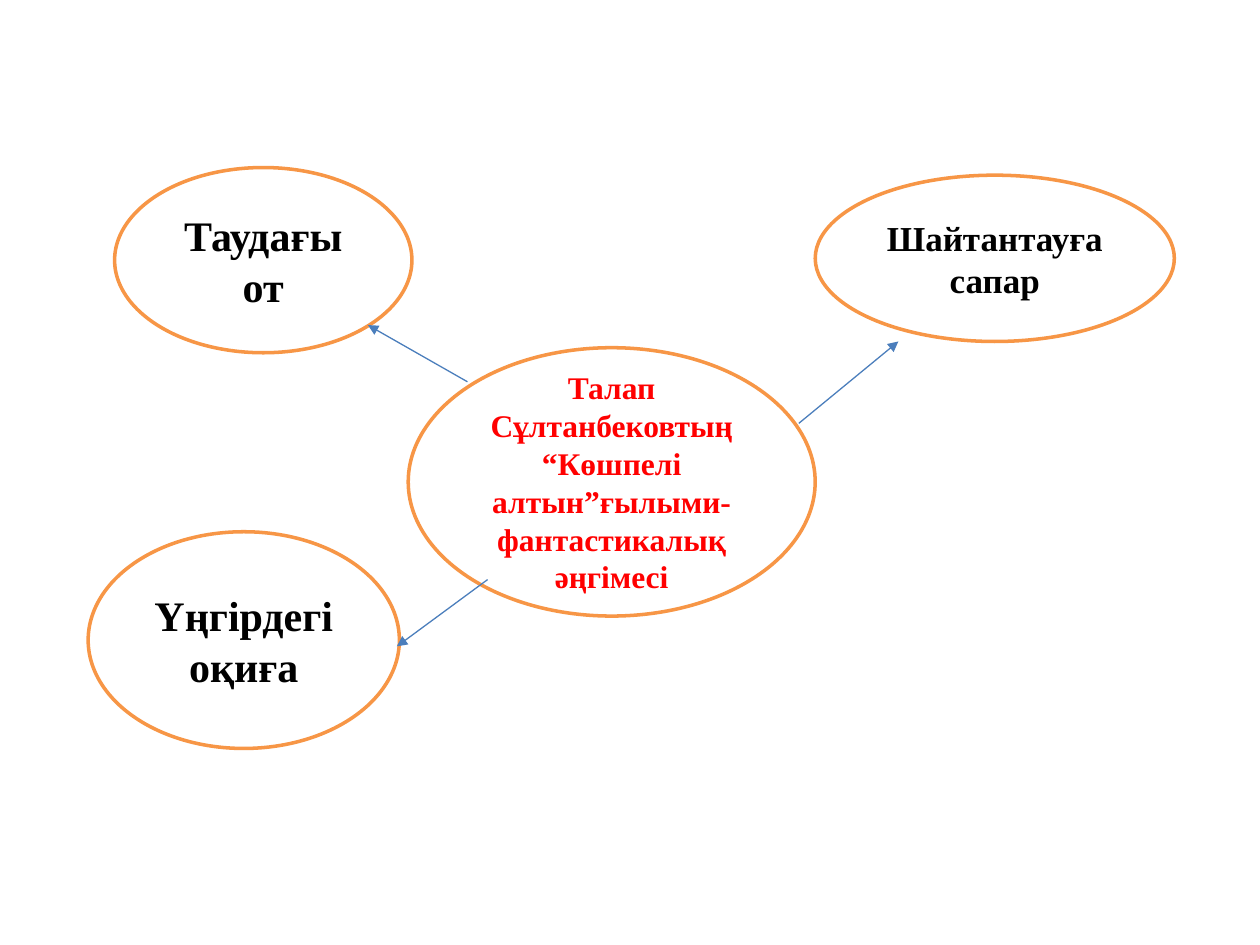
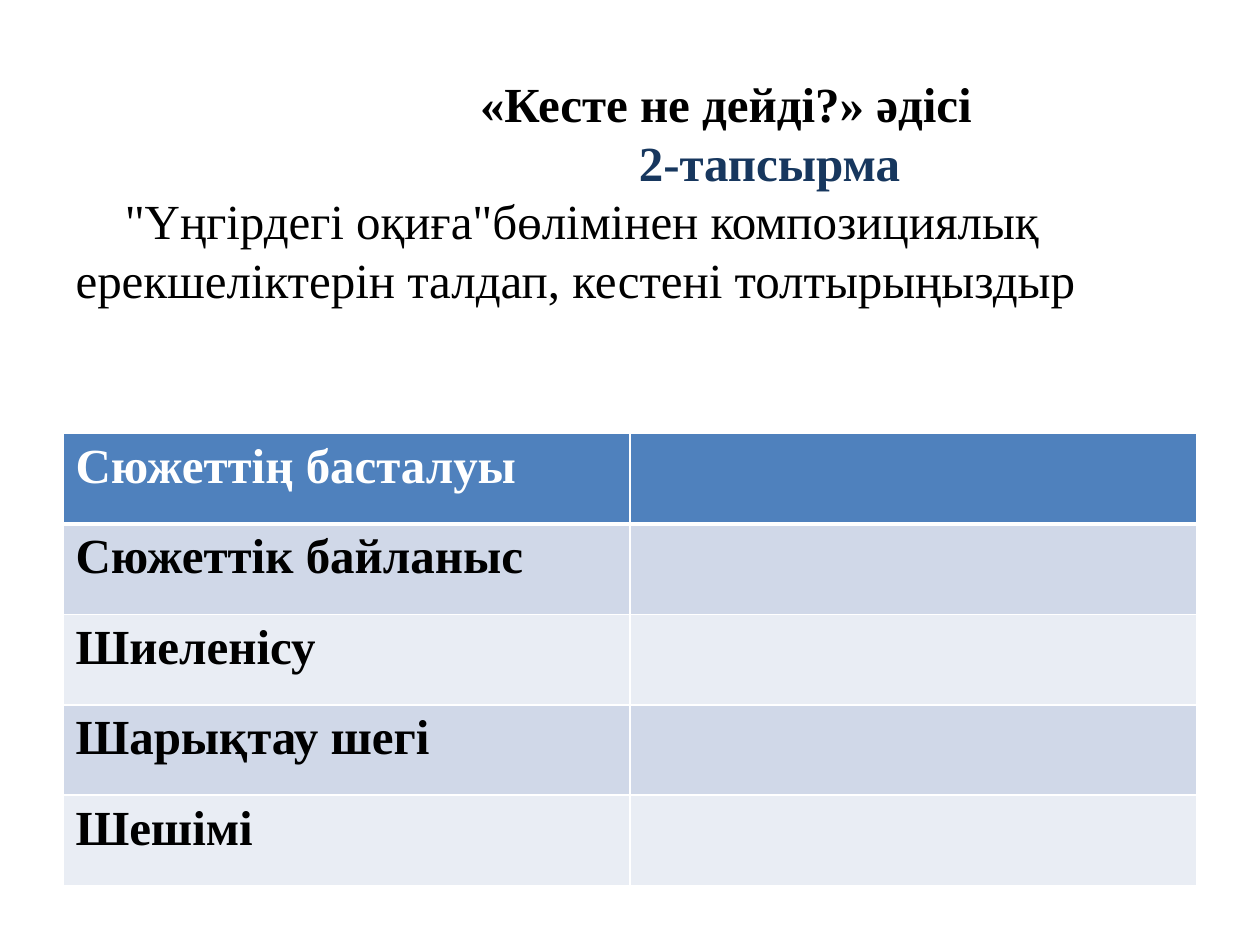
import pptx
import pptx.util
import pptx.dml.color
import pptx.enum.dml
import pptx.enum.shapes
import pptx.enum.text
import pptx.oxml
import pptx.oxml.ns
from lxml import etree

FONT = "Times New Roman"
BLACK, WHITE, RED, NAVY = "000000", "FFFFFF", "FF0000", "17375E"
ORANGE, ARROW_BLUE = "F79646", "4B7EBC"
HEADER_FILL, BAND_FILLS = "4F81BD", ("D0D8E8", "E9EDF4")

BUBBLES = [
    ("Талап Сұлтанбековтың “Көшпелі алтын”ғылыми- фантастикалық әңгімесі",
     (3.24, 2.76, 3.23, 2.13), 18, RED),
    ("Шайтантауға сапар", (6.47, 1.39, 2.85, 1.32), 20, BLACK),
    ("Таудағы от", (0.91, 1.33, 2.36, 1.47), 24, BLACK),
    ("Үңгірдегі оқиға", (0.7, 4.22, 2.47, 1.72), 24, BLACK),
]
ARROWS = [
    (6.34, 3.36, 7.13, 2.71),
    (3.71, 3.03, 2.92, 2.58),
    (3.87, 4.6, 3.15, 5.13),
]
TITLE_LINES = [
    ("«Кесте не дейді?» әдісі", 3.21, BLACK, True),
    ("2-тапсырма", 4.47, NAVY, True),
    ("\"Үңгірдегі оқиға\"бөлімінен композициялық ерекшеліктерін талдап, "
     "кестені толтырыңыздыр", 0.39, BLACK, False),
]
PLOT_STAGES = [
    "Сюжеттің басталуы",
    "Сюжеттік байланыс",
    "Шиеленісу",
    "Шарықтау шегі",
    "Шешімі",
]


def color(value):
    return pptx.dml.color.RGBColor.from_string(value)


def inches(*lengths):
    return [pptx.util.Inches(length) for length in lengths]


def style(para, size, value, bold=True):
    para.font.name = FONT
    para.font.size = pptx.util.Pt(size)
    para.font.bold = bold
    para.font.color.rgb = color(value)


def paint(item, fill):
    item.fill.solid()
    item.fill.fore_color.rgb = color(fill)


def set_line(line, value, width):
    line.color.rgb = color(value)
    line.width = pptx.util.Pt(width)


def add_bubble(page, text, place, size, text_color):
    bubble = page.shapes.add_shape(
        pptx.enum.shapes.MSO_SHAPE.OVAL, *inches(*place))
    bubble.shadow.inherit = False
    paint(bubble, WHITE)
    set_line(bubble.line, ORANGE, 2)
    frame = bubble.text_frame
    frame.word_wrap = True
    frame.vertical_anchor = pptx.enum.text.MSO_ANCHOR.MIDDLE
    para = frame.paragraphs[0]
    para.text = text
    para.alignment = pptx.enum.text.PP_ALIGN.CENTER
    style(para, size, text_color)


def add_arrow(page, ends):
    arrow = page.shapes.add_connector(
        pptx.enum.shapes.MSO_CONNECTOR.STRAIGHT, *inches(*ends))
    set_line(arrow.line, ARROW_BLUE, 0.75)
    tail = etree.SubElement(arrow.line._get_or_add_ln(),
                            pptx.oxml.ns.qn("a:tailEnd"))
    tail.set("type", "triangle")
    etree.SubElement(arrow._element.spPr, pptx.oxml.ns.qn("a:effectLst"))


def set_borders(cell, top, bottom):
    properties = cell._tc.get_or_add_tcPr()
    widths = {"lnL": 1, "lnR": 1, "lnT": top, "lnB": bottom}
    for position, (side, width) in enumerate(widths.items()):
        border = pptx.oxml.parse_xml(
            f'<a:{side} {pptx.oxml.ns.nsdecls("a")} w="{pptx.util.Pt(width)}">'
            f'<a:solidFill><a:srgbClr val="{WHITE}"/></a:solidFill></a:{side}>')
        properties.insert(position, border)


def build_map(deck):
    page = deck.slides.add_slide(deck.slide_layouts[6])
    for bubble in BUBBLES:
        add_bubble(page, *bubble)
    for ends in ARROWS:
        add_arrow(page, ends)


def add_title(page):
    title = page.shapes.title
    title.left, title.top, title.width, title.height = inches(0.5, 0.3, 9.27, 2.43)
    frame = title.text_frame
    frame.word_wrap = True
    frame.auto_size = pptx.enum.text.MSO_AUTO_SIZE.NONE
    frame.vertical_anchor = pptx.enum.text.MSO_ANCHOR.MIDDLE
    frame.text = "\n".join(line[0] for line in TITLE_LINES)
    for para, (_, indent, text_color, bold) in zip(frame.paragraphs, TITLE_LINES):
        para.alignment = pptx.enum.text.PP_ALIGN.LEFT
        para._p.get_or_add_pPr().set("indent", str(pptx.util.Inches(indent)))
        style(para, 28, text_color, bold)


def add_plot_table(page):
    table = page.shapes.add_table(
        len(PLOT_STAGES), 2, *inches(0.5, 3.44, 9, 3.59)).table
    for number, stage in enumerate(PLOT_STAGES):
        header = number == 0
        fill = HEADER_FILL if header else BAND_FILLS[(number - 1) % 2]
        for cell in table.rows[number].cells:
            paint(cell, fill)
            set_borders(cell, 3 if number == 1 else 1, 3 if header else 1)
        para = table.cell(number, 0).text_frame.paragraphs[0]
        para.text = stage
        style(para, 28, WHITE if header else BLACK)


def build_task(deck):
    page = deck.slides.add_slide(deck.slide_layouts[5])
    add_title(page)
    add_plot_table(page)


def main():
    deck = pptx.Presentation()
    deck.slide_width, deck.slide_height = inches(10, 7.5)
    build_map(deck)
    build_task(deck)
    deck.save("out.pptx")


if __name__ == "__main__":
    main()
